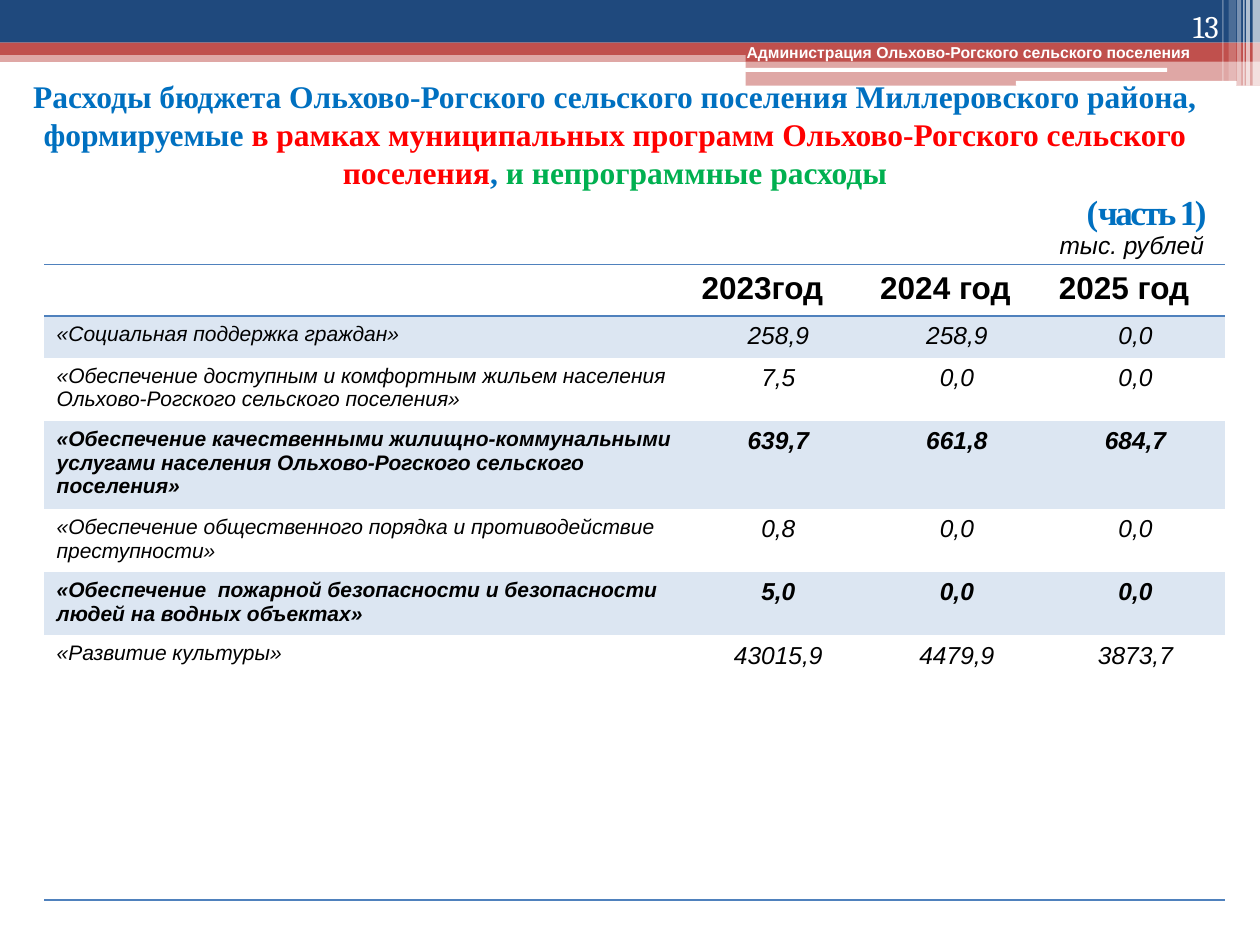
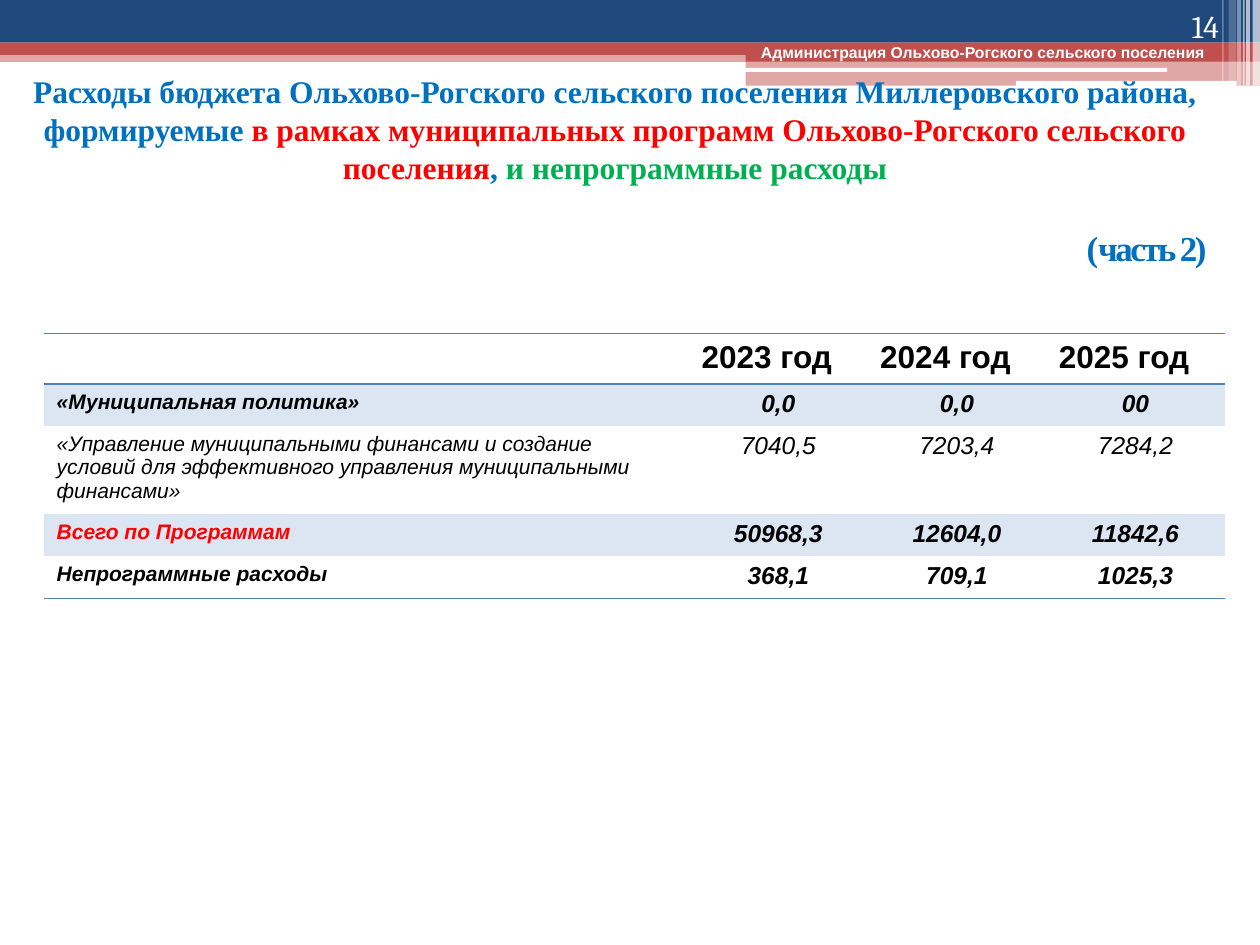
"""Build two slides on budget spending by municipal programme."""
from pptx import Presentation
from pptx.dml.color import RGBColor
from pptx.enum.shapes import MSO_SHAPE as Preset
from pptx.enum.text import MSO_ANCHOR as Anchor, MSO_AUTO_SIZE as AutoSize, PP_ALIGN as Align
from pptx.oxml import parse_xml
from pptx.oxml.ns import nsdecls
from pptx.util import Cm, Pt

COLORS = {
    "navy": "1F497D", "brick": "C0504D", "white": "FFFFFF", "black": "000000",
    "blue": "0070C0", "red": "FF0000", "green": "00B050",
    "rule": "4F81BD", "stripe": "DCE6F2",
}
NO_STYLE = "{2D5ABB26-0587-4C30-8999-92F81FD0307C}"
HEADER_BANDS = [
    (0, 1.02, 25.4, 0.23, "brick", 50, Preset.RECTANGLE),
    (0, 0, 25.4, 0.86, "navy", 100, Preset.RECTANGLE),
    (0, 0.86, 25.4, 0.25, "brick", 100, Preset.RECTANGLE),
    (15.03, 0.99, 10.37, 0.25, "brick", 100, Preset.RECTANGLE),
    (15.03, 1.23, 10.37, 0.5, "brick", 50, Preset.RECTANGLE),
    (15.02, 1.37, 8.51, 0.08, "white", 100, Preset.ROUNDED_RECTANGLE),
    (20.48, 1.63, 4.45, 0.1, "white", 100, Preset.ROUNDED_RECTANGLE),
    (25.25, 0, 0.15, 1.73, "white", 65, Preset.RECTANGLE),
    (25.12, 0, 0.08, 1.73, "white", 65, Preset.RECTANGLE),
    (25.06, 0, 0.03, 1.73, "white", 60, Preset.RECTANGLE),
    (24.94, 0, 0.08, 1.73, "white", 40, Preset.RECTANGLE),
    (24.77, 0, 0.15, 1.63, "white", 20, Preset.RECTANGLE),
    (24.64, 0, 0.03, 1.63, "white", 30, Preset.RECTANGLE),
]
TITLE_SPANS = [
    ("Расходы бюджета Ольхово-Рогского сельского поселения Миллеровского района, "
     "формируемые ", "blue"),
    ("в рамках муниципальных программ Ольхово-Рогского сельского поселения", "red"),
    (", ", "blue"),
    ("и непрограммные расходы", "green"),
]
COLUMN_WIDTHS = [13, 3.6, 3.6, 3.6]
PAGES = [
    {
        "number": "13", "part": "часть 1)", "part_gap": 0, "owner_left": 14.8,
        "title_top": 1.52, "title_height": 3.2, "table_top": 5.33, "unit": "тыс. рублей",
        "header": ["", "2023год", "2024 год", "2025 год"],
        "heights": [1.04, 0.8, 1.2, 1.67, 1.2, 1.2, 5.33],
        "rows": [
            ("«Социальная поддержка граждан»", "258,9", "258,9", "0,0"),
            ("«Обеспечение доступным и комфортным жильем населения "
             "Ольхово-Рогского сельского поселения»", "7,5", "0,0", "0,0"),
            ("«Обеспечение качественными жилищно-коммунальными услугами населения "
             "Ольхово-Рогского сельского поселения»", "639,7", "661,8", "684,7"),
            ("«Обеспечение общественного порядка и противодействие преступности»",
             "0,8", "0,0", "0,0"),
            ("«Обеспечение  пожарной безопасности и безопасности людей на водных объектах»",
             "5,0", "0,0", "0,0"),
            ("«Развитие культуры»", "43015,9", "4479,9", "3873,7"),
        ],
        "bold_rows": [3, 5], "red_rows": [],
    },
    {
        "number": "14", "part": "часть 2)", "part_gap": 23, "owner_left": 15.09,
        "title_top": 1.73, "title_height": 3.4, "table_top": 6.72, "unit": "",
        "header": ["", "2023 год", "2024 год", "2025 год"],
        "heights": [0.99, 0.8, 1.67, 0.8, 0.8],
        "rows": [
            ("«Муниципальная политика»", "0,0", "0,0", "00"),
            ("«Управление муниципальными финансами и создание условий для "
             "эффективного управления муниципальными финансами»",
             "7040,5", "7203,4", "7284,2"),
            ("Всего по Программам", "50968,3", "12604,0", "11842,6"),
            ("Непрограммные расходы", "368,1", "709,1", "1025,3"),
        ],
        "bold_rows": [1, 3, 4], "red_rows": [3],
    },
]


def add_span(para, text, size, color, font="Arial", bold=False, italic=False):
    span = para.add_run()
    span.text = text
    span.font.size = Pt(size)
    span.font.name = font
    span.font.bold = bold
    span.font.italic = italic
    span.font.color.rgb = RGBColor.from_string(COLORS[color])
    return span


def add_label(page, left, top, width, height):
    box = page.shapes.add_textbox(Cm(left), Cm(top), Cm(width), Cm(height))
    box.text_frame.word_wrap = True
    return box.text_frame


deck = Presentation()
deck.slide_width, deck.slide_height = Cm(25.4), Cm(19.05)

for content in PAGES:
    page = deck.slides.add_slide(deck.slide_layouts[5])

    for left, top, width, height, color, opacity, preset in HEADER_BANDS:
        band = page.shapes.add_shape(preset, Cm(left), Cm(top), Cm(width), Cm(height))
        band.shadow.inherit = False
        band.line.fill.background()
        band.fill.solid()
        band.fill.fore_color.rgb = RGBColor.from_string(COLORS[color])
        if opacity < 100:
            paint = band.element.spPr.xpath("./a:solidFill/a:srgbClr")[0]
            paint.append(parse_xml(f'<a:alpha {nsdecls("a")} val="{opacity * 1000}"/>'))

    owner = add_label(page, content["owner_left"], 0.74, 9.6, 0.64)
    add_span(owner.paragraphs[0], "Администрация Ольхово-Рогского сельского поселения",
             9, "white", bold=True)

    title = page.shapes.title
    page.shapes.element.append(title.element)
    title.left, title.top = Cm(0), Cm(content["title_top"])
    title.width, title.height = Cm(24.8), Cm(content["title_height"])
    frame = title.text_frame
    frame.auto_size = AutoSize.NONE
    frame.vertical_anchor = Anchor.MIDDLE
    frame.margin_left = frame.margin_right = Cm(0.48)
    heading = frame.paragraphs[0]
    heading.alignment = Align.CENTER
    heading.line_spacing = Pt(21.7)
    for text, color in TITLE_SPANS:
        add_span(heading, text, 18, color, "Times New Roman", bold=True)
    part = frame.add_paragraph()
    part.alignment = Align.RIGHT
    part.space_before = Pt(content["part_gap"])
    add_span(part, "(", 20, "blue", "Times New Roman", bold=True)
    tight = add_span(part, content["part"], 20, "blue", "Times New Roman", bold=True)
    tight.font._element.set("spc", "-150")

    number = add_label(page, 22.71, 0, 2.11, 1.02)
    number.vertical_anchor = Anchor.BOTTOM
    number.paragraphs[0].alignment = Align.RIGHT
    add_span(number.paragraphs[0], content["number"], 18, "white", "Cambria")

    lines = [content["header"], *content["rows"]]
    holder = page.shapes.add_table(
        len(lines), len(COLUMN_WIDTHS), Cm(0.89), Cm(content["table_top"]),
        Cm(sum(COLUMN_WIDTHS)), Cm(sum(content["heights"])))
    holder.element.xpath(".//a:tableStyleId")[0].text = NO_STYLE
    table = holder.table
    table.first_row = table.horz_banding = False
    for column, width in zip(table.columns, COLUMN_WIDTHS):
        column.width = Cm(width)
    for row, height in zip(table.rows, content["heights"]):
        row.height = Cm(height)

    for r, line in enumerate(lines):
        edges = ["lnT", "lnB"] if r == 0 else ["lnB"] if r == len(lines) - 1 else []
        for c, text in enumerate(line):
            cell = table.cell(r, c)
            for edge in edges:
                cell._tc.get_or_add_tcPr().append(parse_xml(
                    f'<a:{edge} {nsdecls("a")} w="12700"><a:solidFill>'
                    f'<a:srgbClr val="{COLORS["rule"]}"/></a:solidFill></a:{edge}>'))
            if r % 2:
                cell.fill.solid()
                cell.fill.fore_color.rgb = RGBColor.from_string(COLORS["stripe"])
            else:
                cell.fill.background()
            para = cell.text_frame.paragraphs[0]
            if r and c:
                para.alignment = Align.CENTER
            if text:
                size = 18 if r == 0 else 14 if c else 12
                color = "red" if c == 0 and r in content["red_rows"] else "black"
                bold = r == 0 or r in content["bold_rows"]
                add_span(para, text, size, color, bold=bold, italic=r > 0)

    if content["unit"]:
        unit = add_label(page, 21.11, 4.52, 3.61, 0.86)
        add_span(unit.paragraphs[0], content["unit"], 14, "black", italic=True)

deck.save("out.pptx")
